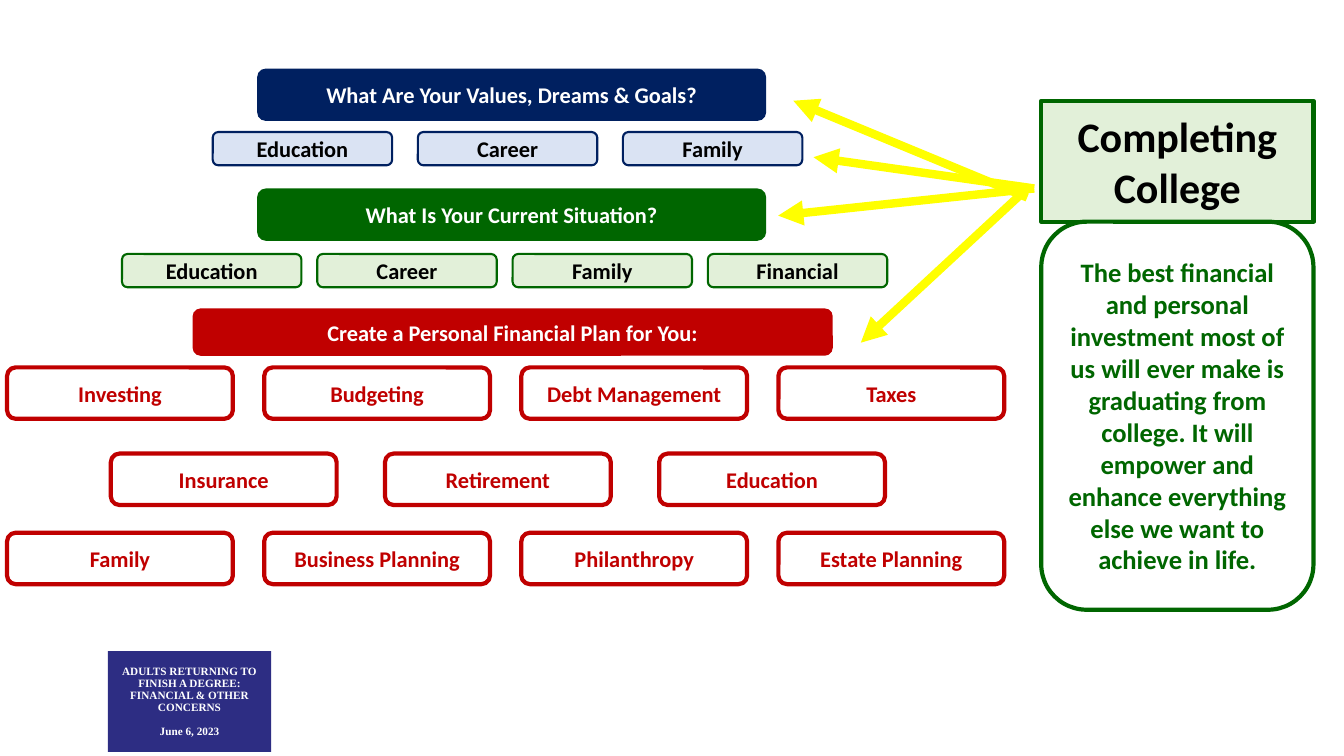
"""Build the slide on completing college as part of a personal financial plan."""
from dataclasses import dataclass
from typing import Optional

from lxml import etree
from pptx import Presentation
from pptx import util as u
from pptx.dml.color import RGBColor
from pptx.enum import shapes, text
from pptx.oxml.ns import qn

WIDTH, HEIGHT = u.Inches(13.33), u.Inches(7.5)
WHITE = RGBColor(0xFF, 0xFF, 0xFF)
BLACK = RGBColor(0x00, 0x00, 0x00)
NAVY = RGBColor(0x00, 0x20, 0x60)
PALE_BLUE = RGBColor(0xDA, 0xE3, 0xF3)
GREEN = RGBColor(0x00, 0x66, 0x00)
PALE_GREEN = RGBColor(0xE2, 0xF0, 0xD9)
RED = RGBColor(0xC0, 0x00, 0x00)
YELLOW = RGBColor(0xFF, 0xFF, 0x00)
INDIGO = RGBColor(0x2D, 0x2D, 0x83)


@dataclass(frozen=True)
class Area:
    """A rectangle in percent of the slide's width and height."""
    left: float
    top: float
    width: float
    height: float

    def lengths(self) -> tuple:
        """Return left, top, width and height as slide lengths."""
        return across(self.left), down(self.top), across(self.width), down(self.height)


@dataclass(frozen=True)
class Look:
    """Colours, outline and type of a box."""
    fill: RGBColor
    ink: RGBColor
    edge: Optional[RGBColor] = None
    edge_width: float = 3
    size: float = 16
    face: str = "Calibri"


@dataclass(frozen=True)
class Row:
    """Equal boxes set at a fixed pitch."""
    labels: tuple
    first: Area
    pitch: float
    look: Look


@dataclass(frozen=True)
class Arrow:
    """An arrow between two points in percent of the slide."""
    start: tuple
    tip: tuple


VALUE = Look(PALE_BLUE, BLACK, NAVY, 1.5)
SITUATION = Look(PALE_GREEN, BLACK, GREEN, 1.5)
PLAN = Look(WHITE, RED, RED)
COLLEGE = Look(PALE_GREEN, BLACK, GREEN, size=30)
BENEFIT = Look(WHITE, GREEN, GREEN, size=19)
EVENT = Look(INDIGO, WHITE, size=8, face="Times New Roman")

BANNERS = (
    ("What Are Your Values, Dreams & Goals?", Area(19.13, 9.07, 37.88, 6.93), Look(NAVY, WHITE)),
    ("What Is Your Current Situation?", Area(19.13, 24.93, 37.88, 6.93), Look(GREEN, WHITE)),
    ("Create a Personal Financial Plan for You:", Area(14.33, 40.8, 47.63, 6.27), Look(RED, WHITE)),
)
ROWS = (
    Row(("Education", "Career", "Family"), Area(15.83, 17.47, 13.35, 4.4), 15.26, VALUE),
    Row(("Education", "Career", "Family", "Financial"),
        Area(9.08, 33.6, 13.35, 4.4), 14.53, SITUATION),
    Row(("Investing", "Budgeting", "Debt Management", "Taxes"),
        Area(0.53, 48.6, 16.8, 6.8), 19.13, PLAN),
    Row(("Insurance", "Retirement", "Education"), Area(8.25, 60, 16.8, 6.8), 20.4, PLAN),
    Row(("Family", "Business Planning", "Philanthropy", "Estate Planning"),
        Area(0.53, 70.47, 16.8, 6.8), 19.13, PLAN),
)
ARROWS = (
    Arrow((76.95, 24.93), (57.9, 28.53)),
    Arrow((76.43, 24.93), (64.05, 45.33)),
    Arrow((76.95, 24.93), (60.53, 20.8)),
    Arrow((76.43, 26.13), (59.03, 13.33)),
)
BENEFIT_WORDS = (
    "The best financial and personal investment most of us will ever make is graduating "
    "from college. It will empower and enhance everything else we want to achieve in life."
)
EVENT_WORDS = ("ADULTS RETURNING TO FINISH A DEGREE: FINANCIAL & OTHER CONCERNS", "June 6, 2023")


def across(share: float) -> int:
    """Turn a percentage of the slide's width into a length."""
    return round(WIDTH * share / 100)


def down(share: float) -> int:
    """Turn a percentage of the slide's height into a length."""
    return round(HEIGHT * share / 100)


def dress(box, look: Look, *lines: str) -> None:
    """Colour a box and write its centred bold lines."""
    box.fill.solid()
    box.fill.fore_color.rgb = look.fill
    if look.edge is None:
        box.line.fill.background()
    else:
        box.line.color.rgb = look.edge
        box.line.width = u.Pt(look.edge_width)
    frame = box.text_frame
    frame.word_wrap = True
    frame.auto_size = text.MSO_AUTO_SIZE.NONE
    frame.vertical_anchor = text.MSO_ANCHOR.MIDDLE
    for index, words in enumerate(lines):
        paragraph = frame.add_paragraph() if index else frame.paragraphs[0]
        paragraph.alignment = text.PP_ALIGN.CENTER
        run = paragraph.add_run()
        run.text = words
        run.font.name = look.face
        run.font.size = u.Pt(look.size)
        run.font.bold = True
        run.font.color.rgb = look.ink


def add_box(slide, area: Area, look: Look, *lines: str,
            outline=shapes.MSO_SHAPE.ROUNDED_RECTANGLE):
    """Add a filled box with text and return it."""
    box = slide.shapes.add_shape(outline, *area.lengths())
    box.shadow.inherit = False
    dress(box, look, *lines)
    return box


def add_row(slide, row: Row) -> None:
    """Add the boxes of a row from left to right."""
    first = row.first
    for column, label in enumerate(row.labels):
        area = Area(first.left + column * row.pitch, first.top, first.width, first.height)
        add_box(slide, area, row.look, label)


def add_arrow(slide, arrow: Arrow) -> None:
    """Add a thick yellow arrow."""
    (start_x, start_y), (tip_x, tip_y) = arrow.start, arrow.tip
    pointer = slide.shapes.add_connector(
        shapes.MSO_CONNECTOR.STRAIGHT,
        across(start_x), down(start_y), across(tip_x), down(tip_y))
    pointer.line.color.rgb = YELLOW
    pointer.line.width = u.Pt(6)
    etree.SubElement(pointer.line._get_or_add_ln(), qn("a:tailEnd"), type="triangle")
    etree.SubElement(pointer._element.spPr, qn("a:effectLst"))


def add_title(slide, area: Area, look: Look, words: str) -> None:
    """Turn the title placeholder into a rounded box."""
    title = slide.shapes.title
    title.left, title.top, title.width, title.height = area.lengths()
    outline = etree.SubElement(title._element.spPr, qn("a:prstGeom"), prst="roundRect")
    etree.SubElement(outline, qn("a:avLst"))
    dress(title, look, words)


def main() -> None:
    """Build and save the slide."""
    deck = Presentation()
    deck.slide_width, deck.slide_height = WIDTH, HEIGHT
    slide = deck.slides.add_slide(deck.slide_layouts[5])
    add_title(slide, Area(77.48, 13.33, 20.25, 16), COLLEGE, "Completing College")
    event = add_box(slide, Area(8.03, 86.13, 12.15, 13.33), EVENT, *EVENT_WORDS,
                    outline=shapes.MSO_SHAPE.RECTANGLE)
    for paragraph in event.text_frame.paragraphs:
        paragraph.line_spacing = 0.9
    event.text_frame.paragraphs[1].space_before = u.Pt(8.5)
    for words, area, look in BANNERS:
        add_box(slide, area, look, words)
    for row in ROWS:
        add_row(slide, row)
    add_box(slide, Area(77.48, 29.33, 20.25, 51.33), BENEFIT, BENEFIT_WORDS)
    for arrow in ARROWS:
        add_arrow(slide, arrow)
    deck.save("out.pptx")


if __name__ == "__main__":
    main()
